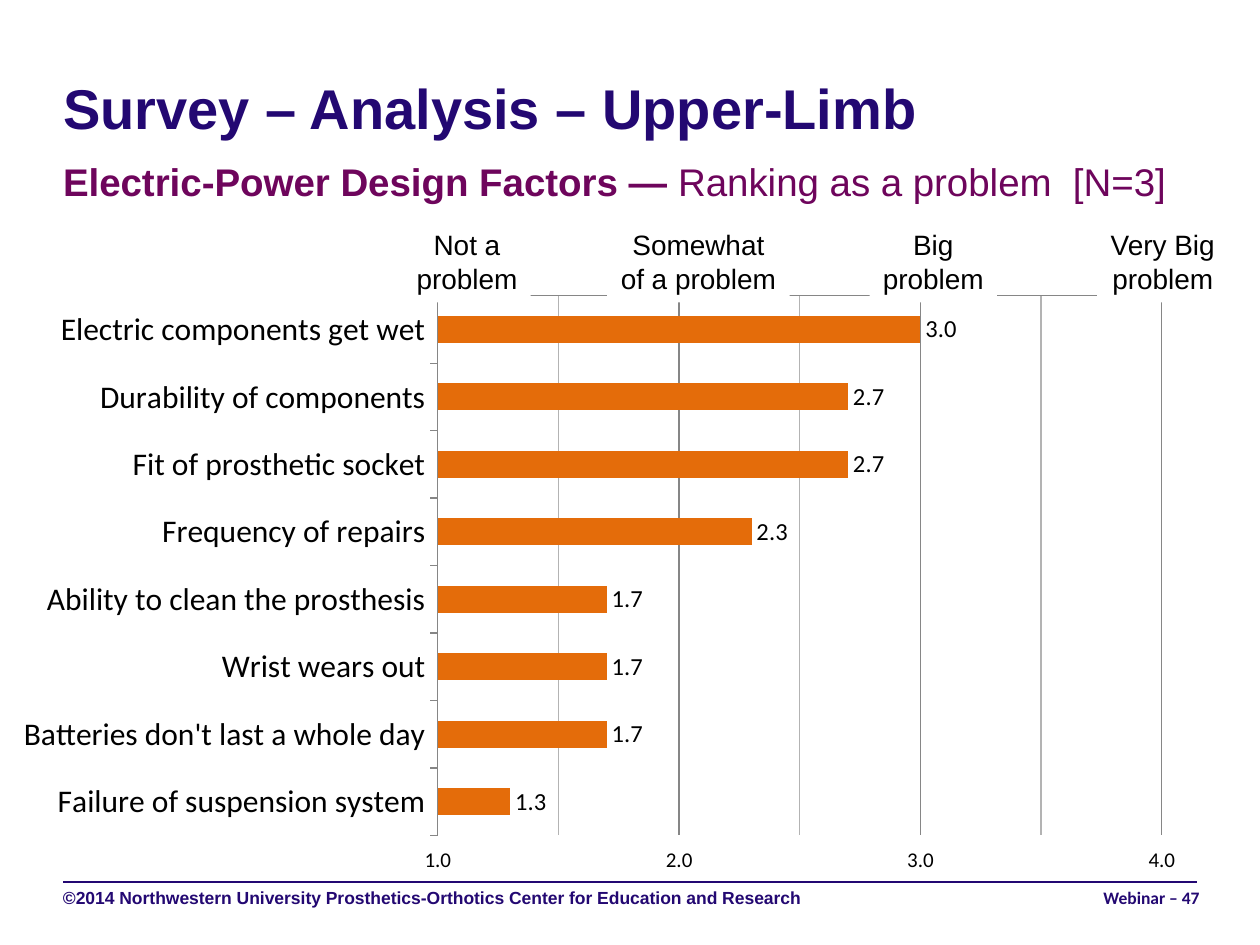
import pptx
import pptx.chart.data
import pptx.dml.color
import pptx.enum.chart
import pptx.enum.shapes
import pptx.enum.text
import pptx.oxml.ns
import pptx.util
from lxml import etree

Cm = pptx.util.Cm
Pt = pptx.util.Pt
RGBColor = pptx.dml.color.RGBColor
Align = pptx.enum.text.PP_ALIGN
Anchor = pptx.enum.text.MSO_ANCHOR
AutoSize = pptx.enum.text.MSO_AUTO_SIZE
qn = pptx.oxml.ns.qn

NAVY = RGBColor(0x23, 0x08, 0x72)
PLUM = RGBColor(0x6E, 0x05, 0x5C)
ORANGE = RGBColor(0xE4, 0x6C, 0x0A)
BLACK = RGBColor(0, 0, 0)
WHITE = RGBColor(0xFF, 0xFF, 0xFF)
GRAY = RGBColor(0x86, 0x86, 0x86)
LIGHT_GRAY = RGBColor(0xB3, 0xB3, 0xB3)

FACTORS = [
    ("Electric components get wet", 3.0),
    ("Durability of components", 2.7),
    ("Fit of prosthetic socket", 2.7),
    ("Frequency of repairs", 2.3),
    ("Ability to clean the prosthesis", 1.7),
    ("Wrist wears out", 1.7),
    ("Batteries don't last a whole day", 1.7),
    ("Failure of suspension system", 1.3),
]

# Left, width and lines of each heading above the scale
SCALE = [
    (8.13, 2.57, ("Not a", "problem")),
    (12.24, 3.68, ("Somewhat", "of a problem")),
    (17.53, 2.57, ("Big", "problem")),
    (22.12, 2.64, ("Very Big", "problem")),
]


def set_font(font, size, color=BLACK, name="Calibri", bold=False):
    font.size = Pt(size)
    font.name = name
    font.bold = bold
    font.color.rgb = color


def add_text(p, text, align=Align.LEFT, **fmt):
    p.alignment = align
    r = p.add_run()
    r.text = text
    set_font(r.font, **fmt)


class SlideBuilder:
    font = "Arial"

    def __init__(self, slide):
        self.s = slide

    def frame(self, sp, top=0, anchor=Anchor.TOP):
        tf = sp.text_frame
        tf.word_wrap = True
        tf.auto_size = AutoSize.NONE
        tf.vertical_anchor = anchor
        tf.margin_left = tf.margin_right = tf.margin_bottom = 0
        tf.margin_top = Cm(top)
        return tf

    def placeholder(self, sp, box, runs, size, color, anchor=Anchor.TOP):
        sp.left, sp.top, sp.width, sp.height = map(Cm, box)
        p = self.frame(sp, anchor=anchor).paragraphs[0]
        p.space_before = Pt(0)
        for text, bold in runs:
            add_text(p, text, size=size, color=color, name=self.font, bold=bold)
        return p

    def textbox(self, box, text, align, name):
        sp = self.s.shapes.add_textbox(*map(Cm, box))
        p = self.frame(sp, top=0.08).paragraphs[0]
        add_text(p, text, align, size=10, color=NAVY, name=name, bold=True)

    def scale_heading(self, group, box, lines):
        sp = group.shapes.add_shape(pptx.enum.shapes.MSO_SHAPE.RECTANGLE, *map(Cm, box))
        sp.shadow.inherit = False
        sp.fill.solid()
        sp.fill.fore_color.rgb = WHITE
        sp.line.fill.background()
        tf = sp.text_frame
        tf.word_wrap = False
        tf.auto_size = AutoSize.SHAPE_TO_FIT_TEXT
        tf.vertical_anchor = Anchor.TOP
        for i, line in enumerate(lines):
            p = tf.add_paragraph() if i else tf.paragraphs[0]
            add_text(p, line, Align.CENTER, size=16, name=self.font)

    def rule(self, x1, x2, y):
        line = self.s.shapes.add_connector(
            pptx.enum.shapes.MSO_CONNECTOR.STRAIGHT, Cm(x1), Cm(y), Cm(x2), Cm(y))
        line.line.color.rgb = NAVY
        line.line.width = Pt(1)
        etree.SubElement(line._element.spPr, qn("a:effectLst"))

    def bar_chart(self, box, rows):
        xl = pptx.enum.chart
        data = pptx.chart.data.CategoryChartData(number_format="0.0")
        data.categories = [name for name, _ in rows]
        data.add_series("Series 1", [value for _, value in rows])
        chart = self.s.shapes.add_chart(
            xl.XL_CHART_TYPE.BAR_CLUSTERED, *map(Cm, box), data).chart
        chart.has_legend = False
        chart.has_title = False
        set_font(chart.font, 10)

        # Bars and their values
        plot = chart.plots[0]
        plot.gap_width = 150
        plot.vary_by_categories = False
        fill = plot.series[0].format.fill
        fill.solid()
        fill.fore_color.rgb = ORANGE
        plot.has_data_labels = True
        labels = plot.data_labels
        labels.show_value = True
        labels.number_format = "0.0"
        labels.number_format_is_linked = False
        labels.position = xl.XL_LABEL_POSITION.OUTSIDE_END
        set_font(labels.font, 14)

        # Axes, with the scale figures below the reversed categories
        cat, val = chart.category_axis, chart.value_axis
        cat.reverse_order = True
        cat.has_major_gridlines = False
        val.minimum_scale, val.maximum_scale = 1, 4
        val.major_unit, val.minor_unit = 1, 0.5
        val.has_major_gridlines = val.has_minor_gridlines = True
        val.tick_label_position = xl.XL_TICK_LABEL_POSITION.HIGH
        val.tick_labels.number_format = "0.0"
        val.tick_labels.number_format_is_linked = False
        for axis, size in ((cat, 18), (val, 12)):
            axis.major_tick_mark = xl.XL_TICK_MARK.OUTSIDE
            set_font(axis.tick_labels.font, size)
        for part in (cat, val, val.major_gridlines):
            part.format.line.color.rgb = GRAY
            part.format.line.width = Pt(0.75)

        # Minor gridlines take their line as XML
        minor = val._element.find(qn("c:minorGridlines"))
        props = etree.SubElement(minor, qn("c:spPr"))
        ln = etree.SubElement(props, qn("a:ln"), w=str(Pt(0.75)))
        solid = etree.SubElement(ln, qn("a:solidFill"))
        etree.SubElement(solid, qn("a:srgbClr"), val=str(LIGHT_GRAY))

        # Fixed plot area
        area = chart._chartSpace.chart.plotArea
        for old in area.findall(qn("c:layout")):
            area.remove(old)
        layout = etree.Element(qn("c:layout"))
        manual = etree.SubElement(layout, qn("c:manualLayout"))
        for tag, value in (("layoutTarget", "inner"), ("xMode", "edge"), ("yMode", "edge"),
                           ("x", 0.352), ("y", 0.02), ("w", 0.616), ("h", 0.9)):
            etree.SubElement(manual, qn("c:" + tag), val=str(value))
        area.insert(0, layout)


def main():
    prs = pptx.Presentation()
    prs.slide_width, prs.slide_height = Cm(25.4), Cm(19.05)
    s = prs.slides.add_slide(prs.slide_layouts[1])
    b = SlideBuilder(s)

    # Footer rule and chart
    b.rule(1.27, 24.13, 17.78)
    b.bar_chart((0.48, 5.72, 23.7, 12.09), FACTORS)

    # Title and subtitle
    b.placeholder(s.shapes.title, (1.27, 1.47, 22.86, 1.37),
                  [("Survey – Analysis – Upper-Limb", True)], 32, NAVY, Anchor.MIDDLE)
    p = b.placeholder(s.placeholders[1], (1.27, 3.18, 22.86, 1.27),
                      [("Electric-Power Design Factors — ", True),
                       ("Ranking as a problem  [N=3]", False)], 22, PLUM)
    p.space_after = Pt(12)
    pPr = p._p.get_or_add_pPr()
    pPr.set("marL", "0")
    pPr.set("indent", "0")
    etree.SubElement(pPr, qn("a:buNone"))

    # Scale headings
    group = s.shapes.add_group_shape()
    for left, width, lines in SCALE:
        b.scale_heading(group, (left, 4.47, width, 1.63), lines)

    # Footer
    b.textbox((1.27, 17.81, 16.94, 1.02),
              "©2014 Northwestern University Prosthetics-Orthotics Center for Education and Research",
              Align.LEFT, "Arial")
    b.textbox((18.26, 17.81, 5.92, 1.02), "Webinar – 47", Align.RIGHT, "Calibri")

    prs.save("out.pptx")


if __name__ == "__main__":
    main()
